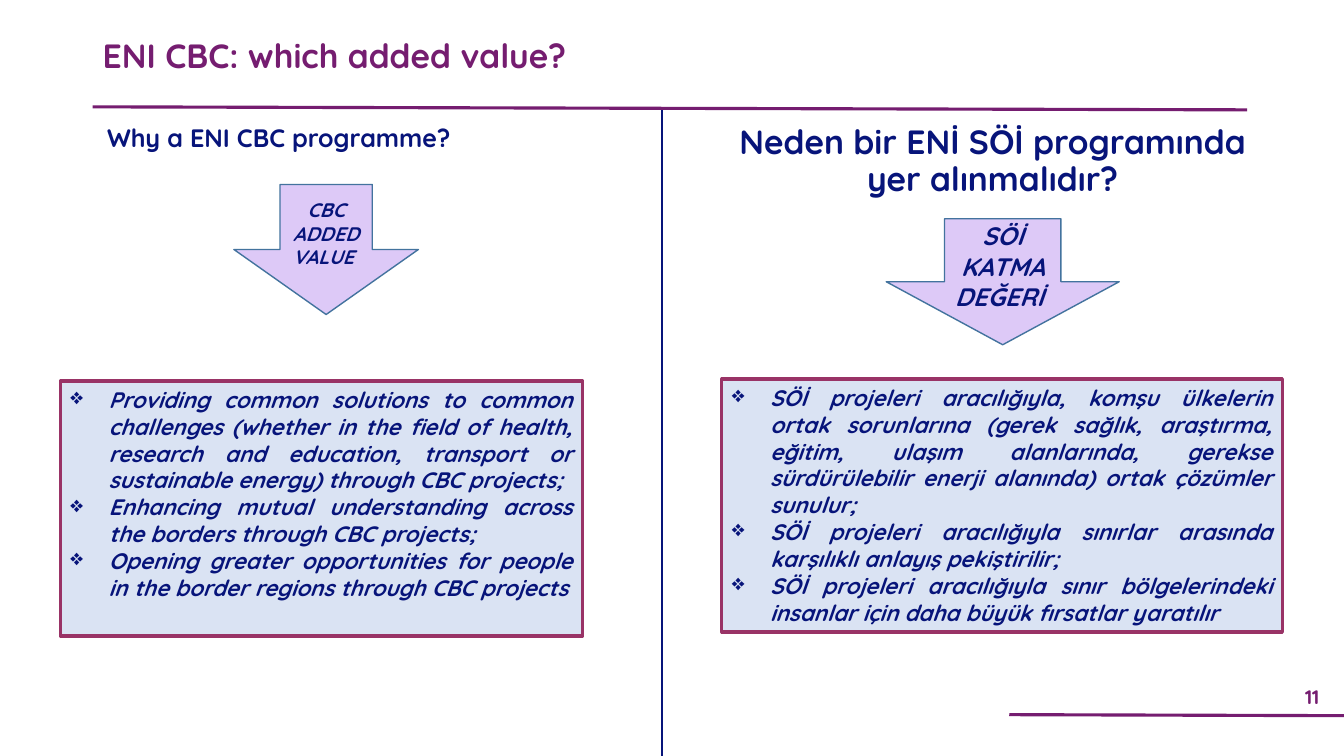
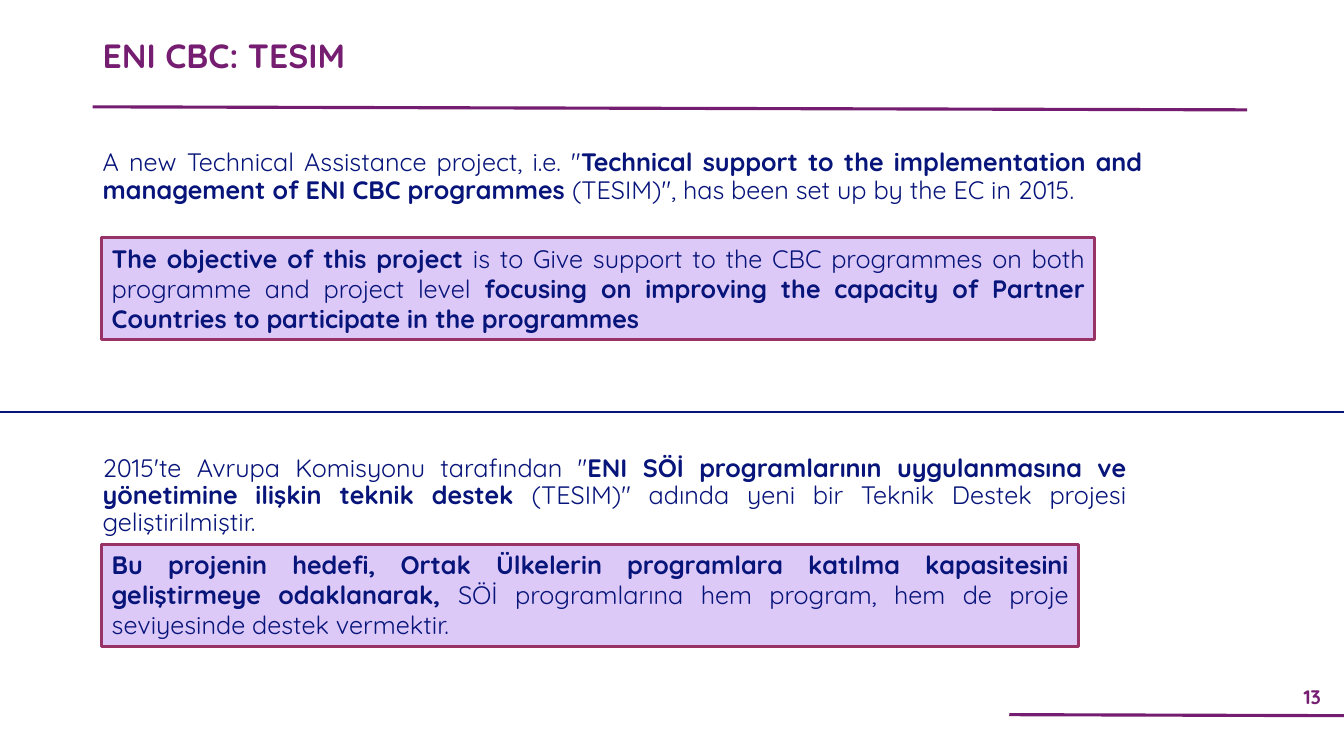
from lxml.etree import SubElement
from pptx import Presentation
from pptx.dml.color import RGBColor
from pptx.enum.shapes import MSO_CONNECTOR, MSO_SHAPE
from pptx.enum.text import MSO_ANCHOR, PP_ALIGN
from pptx.oxml.ns import qn
from pptx.util import Inches, Pt

FONT = "Quicksand"
PURPLE, NAVY, PLUM, STEEL = "751D70", "07147A", "993366", "43739E"
LILAC, PALE_BLUE = "DDC9F7", "DAE3F3"
SLIDE_WIDTH, SLIDE_HEIGHT = 13.33, 7.5

VALUE_TITLE, VALUE_PAGE = "ENI CBC: which added value?", 11
VALUE_COLUMNS = [
    {
        "heading": ("Why a ENI CBC programme?", 18, (0, 1.2, 5.53, 0.6)),
        "arrow": ("CBC ADDED VALUE ", 14, (2.32, 1.83, 1.83, 1.29)),
        "panel": (0.6, 3.78, 5.18, 2.53),
        "points": [
            "Providing common solutions to common challenges (whether in the field of health, "
            "research and education, transport or sustainable energy) through CBC projects; ",
            "Enhancing mutual understanding across the borders through CBC projects;",
            "Opening greater opportunities for people in the border regions through CBC projects",
        ],
    },
    {
        "heading": ("Neden bir ENİ SÖİ programında yer alınmalıdır?", 24, (6.96, 1.2, 5.77, 0.9)),
        "arrow": ("SÖİ KATMA DEĞERİ ", 18, (8.79, 2.17, 2.31, 1.25)),
        "panel": (7.16, 3.76, 5.56, 2.51),
        "points": [
            "SÖİ projeleri aracılığıyla, komşu ülkelerin ortak sorunlarına (gerek sağlık, "
            "araştırma, eğitim, ulaşım alanlarında, gerekse sürdürülebilir enerji alanında) "
            "ortak çözümler sunulur; ",
            "SÖİ projeleri aracılığıyla sınırlar arasında karşılıklı anlayış pekiştirilir;",
            "SÖİ projeleri aracılığıyla sınır bölgelerindeki insanlar için daha büyük "
            "fırsatlar yaratılır",
        ],
    },
]

TESIM_TITLE, TESIM_PAGE = "ENI CBC: TESIM", 13
TESIM_SECTIONS = [
    {
        "intro_place": (0.92, 1.44, 10.51, 0.8),
        "intro": [
            ('A new Technical Assistance project, i.e. "', False),
            ("Technical support to the implementation and management of ENI CBC programmes ", True),
            ('(TESIM)", has been set up by the EC in 2015.', False),
        ],
        "objective_place": (1.01, 2.36, 9.85, 1.01),
        "objective": [
            ("The objective of this project ", True),
            ("is to Give support to the CBC programmes on both programme and project level ", False),
            ("focusing on improving the capacity of Partner Countries to participate in "
             "the programmes", True),
        ],
    },
    {
        "intro_place": (0.92, 4.47, 10.35, 0.9),
        "intro": [
            ("2015'te Avrupa Komisyonu tarafından \"", False),
            ("ENI SÖİ programlarının uygulanmasına ve yönetimine ilişkin teknik destek ", True),
            ('(TESIM)" adında yeni bir Teknik Destek projesi geliştirilmiştir.', False),
        ],
        "objective_place": (1.01, 5.4, 9.69, 1.01),
        "objective": [
            ("Bu projenin hedefi, Ortak Ülkelerin programlara katılma kapasitesini "
             "geliştirmeye odaklanarak, ", True),
            ("SÖİ programlarına hem program, hem de proje seviyesinde destek vermektir.", False),
        ],
    },
]


def rgb(value):
    return RGBColor.from_string(value)


def add_line(slide, start, end, color, width):
    line = slide.shapes.add_connector(
        MSO_CONNECTOR.STRAIGHT, *(Inches(v) for v in (*start, *end)))
    line.line.color.rgb = rgb(color)
    line.line.width = Pt(width)
    SubElement(line._element.spPr, qn("a:effectLst"))


def add_box(slide, place):
    return slide.shapes.add_textbox(*(Inches(v) for v in place))


def add_filled(slide, kind, place, fill, outline, width):
    shape = slide.shapes.add_shape(kind, *(Inches(v) for v in place))
    shape.shadow.inherit = False
    shape.fill.solid()
    shape.fill.fore_color.rgb = rgb(fill)
    shape.line.color.rgb = rgb(outline)
    shape.line.width = Pt(width)
    return shape


def add_bullet(paragraph):
    properties = paragraph._p.get_or_add_pPr()
    properties.set("marL", str(Inches(0.38)))
    properties.set("indent", str(Inches(-0.38)))
    SubElement(properties, qn("a:buChar"), char="❖")


def write(shape, paragraphs, size, align, color=NAVY, italic=False, spacing=None,
          anchor=MSO_ANCHOR.TOP, bulleted=False):
    frame = shape.text_frame
    frame.word_wrap = True
    frame.vertical_anchor = anchor
    for index, segments in enumerate(paragraphs):
        paragraph = frame.add_paragraph() if index else frame.paragraphs[0]
        if bulleted:
            add_bullet(paragraph)
        paragraph.alignment = align
        if spacing:
            paragraph.line_spacing = spacing
        for text, bold in segments:
            run = paragraph.add_run()
            run.text = text
            run.font.name = FONT
            run.font.size = Pt(size)
            run.font.bold = bold
            run.font.italic = italic
            run.font.color.rgb = rgb(color)


def add_base(deck, title, page):
    slide = deck.slides.add_slide(deck.slide_layouts[6])
    add_line(slide, (0.92, 1.06), (12.37, 1.09), PURPLE, 2.25)
    write(add_box(slide, (12.7, 6.73, 0.63, 0.36)), [[(str(page), True)]], 14,
          PP_ALIGN.CENTER, PURPLE, anchor=MSO_ANCHOR.MIDDLE)
    add_line(slide, (10.01, 7.09), (SLIDE_WIDTH, 7.1), PURPLE, 2.25)
    write(add_box(slide, (0.92, 0.34, 9.73, 0.65)), [[(title, True)]], 24,
          PP_ALIGN.JUSTIFY, PURPLE, spacing=0.9)
    return slide


def build_value_slide(deck):
    slide = add_base(deck, VALUE_TITLE, VALUE_PAGE)
    add_line(slide, (6.57, SLIDE_HEIGHT), (6.57, 1.09), NAVY, 1.5)
    for column in VALUE_COLUMNS:
        heading, size, place = column["heading"]
        write(add_box(slide, place), [[(heading, True)]], size, PP_ALIGN.CENTER, spacing=0.9)
        panel = add_filled(slide, MSO_SHAPE.RECTANGLE, column["panel"], PALE_BLUE, PLUM, 2.25)
        write(panel, [[(point, True)] for point in column["points"]], 16,
              PP_ALIGN.JUSTIFY, italic=True, bulleted=True)
        label, size, place = column["arrow"]
        arrow = add_filled(slide, MSO_SHAPE.DOWN_ARROW, place, LILAC, STEEL, 1)
        write(arrow, [[(label, True)]], size, PP_ALIGN.CENTER, italic=True,
              anchor=MSO_ANCHOR.MIDDLE)


def build_tesim_slide(deck):
    slide = add_base(deck, TESIM_TITLE, TESIM_PAGE)
    for section in TESIM_SECTIONS:
        write(add_box(slide, section["intro_place"]), [section["intro"]], 18,
              PP_ALIGN.JUSTIFY, spacing=0.9)
        objective = add_filled(slide, MSO_SHAPE.RECTANGLE, section["objective_place"],
                               LILAC, PLUM, 2.25)
        write(objective, [section["objective"]], 18, PP_ALIGN.JUSTIFY)
    add_line(slide, (0, 4.09), (SLIDE_WIDTH, 4.09), NAVY, 1.5)


def main():
    deck = Presentation()
    deck.slide_width = Inches(SLIDE_WIDTH)
    deck.slide_height = Inches(SLIDE_HEIGHT)
    build_value_slide(deck)
    build_tesim_slide(deck)
    deck.save("out.pptx")


if __name__ == "__main__":
    main()
